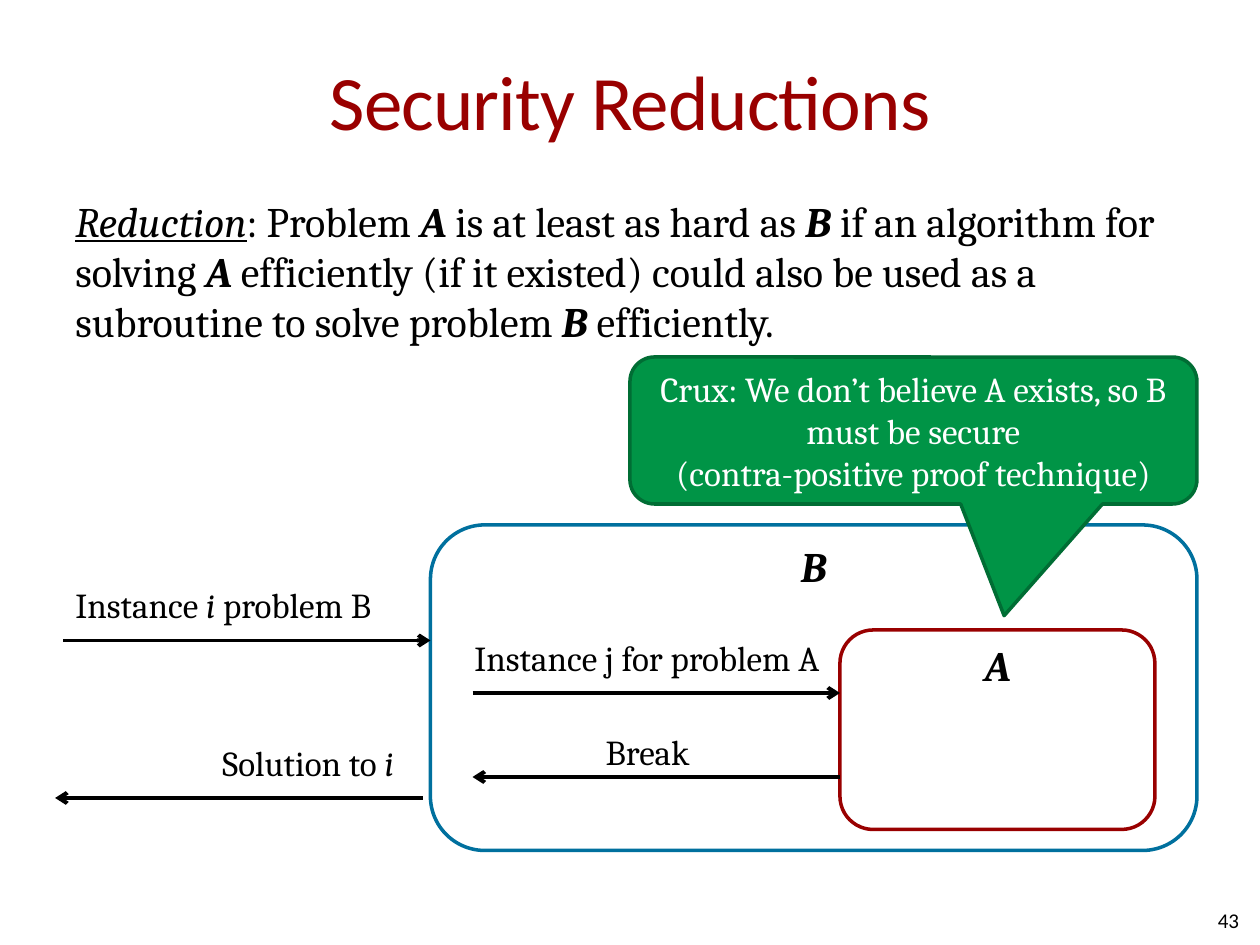
from lxml.etree import SubElement
from pptx import Presentation
from pptx.dml.color import RGBColor
from pptx.enum.shapes import MSO_CONNECTOR, MSO_SHAPE
from pptx.enum.text import MSO_ANCHOR, PP_ALIGN
from pptx.oxml.ns import qn
from pptx.util import Inches, Pt

BLACK = RGBColor(0x00, 0x00, 0x00)
WHITE = RGBColor(0xFF, 0xFF, 0xFF)
RED = RGBColor(0x99, 0x00, 0x00)
BLUE = RGBColor(0x00, 0x70, 0x9E)
GREEN = RGBColor(0x00, 0x94, 0x46)
DARK_GREEN = RGBColor(0x00, 0x6D, 0x34)

presentation = Presentation()
presentation.slide_width = Inches(10)
presentation.slide_height = Inches(7.5)
slide = presentation.slides.add_slide(presentation.slide_layouts[5])
CELL = presentation.slide_width / 120  # the grid has 120 columns and 90 rows


def grid(*cells):
    return [round(cell * CELL) for cell in cells]


def write(shape, pieces, size, color=BLACK, font="Cambria", align=PP_ALIGN.LEFT, **frame_format):
    """Fill a shape with (text, style) pieces; style letters are b, i and u."""
    frame = shape.text_frame
    frame.word_wrap = True
    for name, value in frame_format.items():
        setattr(frame, name, value)
    paragraph = frame.paragraphs[0]
    paragraph.alignment = align
    for text, style in pieces:
        if text == "\n":
            paragraph.add_line_break()
            continue
        run = paragraph.add_run()
        run.text = text
        run.font.color.rgb = color
        font_format = {"name": font, "size": Pt(size), "bold": "b" in style,
                       "italic": "i" in style, "underline": "u" in style}
        for name, value in font_format.items():
            setattr(run.font, name, value)


NO_MARGINS = dict.fromkeys(("margin_left", "margin_top", "margin_right", "margin_bottom"), 0)

# Title
title = slide.shapes.title
title.left, title.top, title.width, title.height = grid(6, 2, 108, 15)
write(title, [("Security Reductions", "")], 44, RED, "Calibri", PP_ALIGN.CENTER,
      vertical_anchor=MSO_ANCHOR.MIDDLE, margin_left=0, margin_right=0)
title.text_frame.paragraphs[0].runs[0].font._element.set("spc", "-50")

# Definition
definition = slide.shapes.add_textbox(*grid(6, 18, 108, 62.4))
write(definition, [
    ("Reduction", "iu"), (": Problem ", ""), ("A", "bi"), (" is at least as hard as ", ""),
    ("B", "bi"), (" if an algorithm for solving ", ""), ("A", "bi"),
    (" efficiently (if it existed) could also be used as a subroutine to solve problem ", ""),
    ("B", "bi"), (" efficiently.", ""),
], 24)

# Page number
page_number = slide.shapes.add_textbox(*grid(90, 85.2, 28, 4.8))
write(page_number, [("43", "")], 12, font="Calibri", align=PP_ALIGN.RIGHT,
      vertical_anchor=MSO_ANCHOR.MIDDLE, **NO_MARGINS)

# Problem boxes and the callout that points at box A
crux = [("Crux: We don’t believe A exists, so B must be secure", ""), ("\n", ""),
        ("(contra-positive proof technique)", "")]
ROUNDED, CALLOUT = MSO_SHAPE.ROUNDED_RECTANGLE, MSO_SHAPE.ROUNDED_RECTANGULAR_CALLOUT
boxes = [
    (ROUNDED, (80, 60, 30, 19), WHITE, RED, [("A", "bi")], 24, BLACK, MSO_ANCHOR.TOP),
    (ROUNDED, (41, 50, 73, 31), None, BLUE, [("B", "bi")], 24, BLACK, MSO_ANCHOR.TOP),
    (CALLOUT, (60, 34, 54, 14), GREEN, DARK_GREEN, crux, 20, WHITE, MSO_ANCHOR.MIDDLE),
]
for kind, place, fill, line, pieces, size, color, anchor in boxes:
    box = slide.shapes.add_shape(kind, *grid(*place))
    box.shadow.inherit = False
    if fill is None:
        box.fill.background()
    else:
        box.fill.solid()
        box.fill.fore_color.rgb = fill
    box.line.color.rgb = line
    box.line.width = Pt(2)
    if kind == CALLOUT:
        box.adjustments[0], box.adjustments[1] = 0.16, 1.26
    write(box, pieces, size, color, align=PP_ALIGN.CENTER, vertical_anchor=anchor, **NO_MARGINS)

# Arrows: start column, end column, row
for start, end, row in [(6, 41, 61), (45, 80, 66), (80, 45, 74), (40.25, 5.25, 76)]:
    arrow = slide.shapes.add_connector(MSO_CONNECTOR.STRAIGHT, *grid(start, row, end, row))
    arrow.line.color.rgb = BLACK
    arrow.line.width = Pt(2.25)
    SubElement(arrow.line._get_or_add_ln(), qn("a:tailEnd"), type="arrow")
    SubElement(arrow._element.spPr, qn("a:effectLst"))

# Arrow labels, each wide enough for one line: column, row, width, text
labels = [
    (6, 55, 34, [("Instance ", ""), ("i", "i"), (" problem B", "")]),
    (44, 60, 37, [("Instance j for problem A", "")]),
    (56.5, 69, 14, [("Break", "")]),
    (20, 70, 21, [("Solution to ", ""), ("i", "i")]),
]
for column, row, width, pieces in labels:
    label = slide.shapes.add_textbox(*grid(column, row, width, 5))
    write(label, pieces, 20)

presentation.save("out.pptx")
